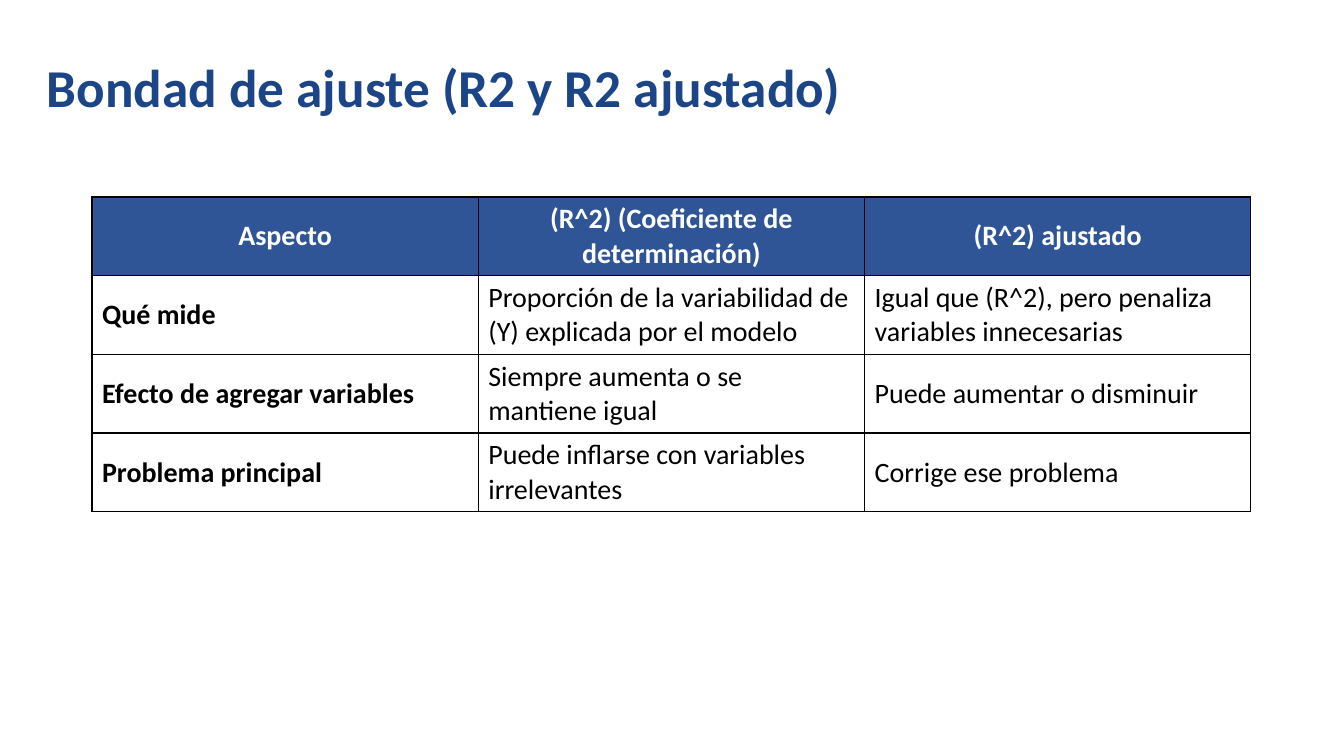
from lxml import etree
from pptx import Presentation
from pptx.dml.color import RGBColor
from pptx.enum.text import MSO_ANCHOR, MSO_AUTO_SIZE, PP_ALIGN
from pptx.oxml.ns import qn
from pptx.util import Pt

PX = 914400 / 100.8
MIDDLE = MSO_ANCHOR.MIDDLE
FIXED = MSO_AUTO_SIZE.NONE
LEFT, CENTER = PP_ALIGN.LEFT, PP_ALIGN.CENTER
FONT = "Calibri"
NAVY, BLUE, WHITE, BLACK = "1C4587", "2F5597", "FFFFFF", "000000"

ROWS = [
    ["Aspecto", "(R^2) (Coeficiente de determinación)", "(R^2) ajustado"],
    ["Qué mide", "Proporción de la variabilidad de (Y) explicada por el modelo",
     "Igual que (R^2), pero penaliza variables innecesarias"],
    ["Efecto de agregar variables", "Siempre aumenta o se mantiene igual",
     "Puede aumentar o disminuir"],
    ["Problema principal", "Puede inflarse con variables irrelevantes",
     "Corrige ese problema"],
]


def px(n):
    return round(n * PX)


def rgb(code):
    return RGBColor.from_string(code)


def style(para, size, color, bold, align):
    para.alignment = align
    font = para.font
    font.name, font.size, font.bold = FONT, Pt(size), bold
    font.color.rgb = rgb(color)


def add_title(slide, text, x, y, w, h):
    title = slide.shapes.title
    title.left, title.top, title.width, title.height = map(px, (x, y, w, h))
    frame = title.text_frame
    frame.text = text
    frame.word_wrap = True
    frame.auto_size = FIXED
    frame.vertical_anchor = MIDDLE
    frame.margin_left = frame.margin_right = px(10)
    frame.margin_top = frame.margin_bottom = px(10)
    style(frame.paragraphs[0], 38, NAVY, True, LEFT)


def add_edges(cell, color):
    props = cell._tc.get_or_add_tcPr()
    for side in ("lnL", "lnR", "lnT", "lnB"):
        line = etree.SubElement(props, qn(f"a:{side}"), w=str(Pt(1)))
        fill = etree.SubElement(line, qn("a:solidFill"))
        etree.SubElement(fill, qn("a:srgbClr"), val=color)


def fill_cell(cell, text, head, bold):
    cell.text = text
    cell.vertical_anchor = MIDDLE
    add_edges(cell, BLACK)
    if head:
        cell.fill.solid()
        cell.fill.fore_color.rgb = rgb(BLUE)
    else:
        cell.fill.background()
    style(cell.text_frame.paragraphs[0], 20, WHITE if head else BLACK,
          bold, CENTER if head else LEFT)


def add_grid(slide, rows, x, y, w, h):
    shape = slide.shapes.add_table(len(rows), len(rows[0]), *map(px, (x, y, w, h)))
    grid = shape.table
    for r, row in enumerate(rows):
        for c, text in enumerate(row):
            fill_cell(grid.cell(r, c), text, r == 0, r == 0 or c == 0)


def main():
    deck = Presentation()
    deck.slide_width, deck.slide_height = px(1344), px(756)
    slide = deck.slides.add_slide(deck.slide_layouts[5])
    add_title(slide, "Bondad de ajuste (R2 y R2 ajustado)", 37, 44, 1269, 85)
    add_grid(slide, ROWS, 92, 197, 1159, 309)
    deck.save("out.pptx")


if __name__ == "__main__":
    main()
